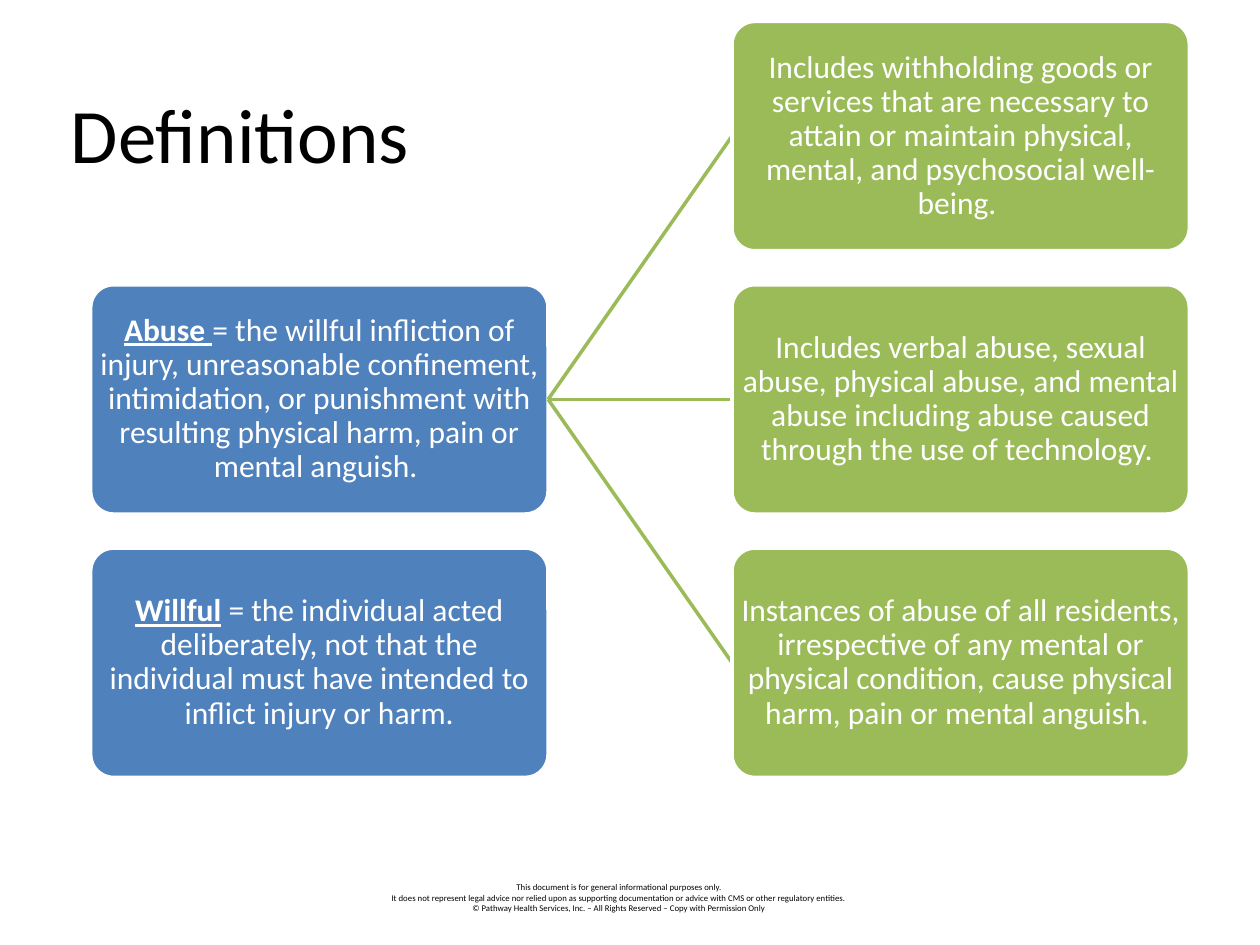
"""Build the Definitions slide on abuse and willful acts."""
from dataclasses import dataclass

from pptx import Presentation
from pptx import util as u
from pptx.dml.color import RGBColor
from pptx.enum import shapes, text
from pptx.oxml.ns import qn
from pptx.shapes.autoshape import Shape
from pptx.shapes.connector import Connector
from pptx.slide import Slide
from pptx.text.text import _Paragraph

BLACK = RGBColor(0x00, 0x00, 0x00)
WHITE = RGBColor(0xFF, 0xFF, 0xFF)
BLUE = RGBColor(0x4F, 0x81, 0xBD)
GREEN = RGBColor(0x9B, 0xBB, 0x59)
FONT = "Calibri"
BOX_WIDTH, BOX_HEIGHT = 3.63, 1.82
TERM_LEFT, DETAIL_LEFT = 0.72, 5.81
FIRST_TOP, ROW_STEP = 0.17, 2.09


@dataclass(frozen=True)
class Card:
    row: int
    body: str
    term: str = ""


ABUSE = Card(
    1,
    "= the willful infliction of injury, unreasonable confinement, intimidation, "
    "or punishment with resulting physical harm, pain or mental anguish. ",
    "Abuse ",
)
WILLFUL = Card(
    2,
    " = the individual acted deliberately, not that the individual must have "
    "intended to inflict injury or harm.",
    "Willful",
)
DETAILS = [
    Card(0, "Includes withholding goods or services that are necessary to attain or "
            "maintain physical, mental, and psychosocial well-being. "),
    Card(1, "Includes verbal abuse, sexual abuse, physical abuse, and mental abuse "
            "including abuse caused through the use of technology. "),
    Card(2, "Instances of abuse of all residents, irrespective of any mental or "
            "physical condition, cause physical harm, pain or mental anguish. "),
]
DISCLAIMER = [
    "This document is for general informational purposes only.",
    "It does not represent legal advice nor relied upon as supporting documentation "
    "or advice with CMS or other regulatory entities.",
    "© Pathway Health Services, Inc. – All Rights Reserved – Copy with Permission Only",
]


def add_span(para: _Paragraph, words: str, size: float, color: RGBColor,
             strong: bool = False) -> None:
    para.alignment = text.PP_ALIGN.CENTER
    span = para.add_run()
    span.text = words
    span.font.name = FONT
    span.font.size = u.Pt(size)
    span.font.color.rgb = color
    span.font.bold = span.font.underline = strong


def add_title(page: Slide) -> None:
    title = page.shapes.title
    title.left, title.top = u.Inches(0.44), u.Inches(0.42)
    title.width, title.height = u.Inches(2.93), u.Inches(1.27)
    title.text_frame.vertical_anchor = text.MSO_ANCHOR.MIDDLE
    add_span(title.text_frame.paragraphs[0], "Definitions", 44, BLACK)


def add_disclaimer(page: Slide) -> None:
    box = page.shapes.add_textbox(
        u.Inches(2.75), u.Inches(6.95), u.Inches(4.33), u.Inches(0.35))
    frame = box.text_frame
    frame.word_wrap = True
    for index, words in enumerate(DISCLAIMER):
        para = frame.add_paragraph() if index else frame.paragraphs[0]
        add_span(para, words, 5, BLACK)


def add_card(page: Slide, card: Card, left: float, color: RGBColor) -> Shape:
    box = page.shapes.add_shape(
        shapes.MSO_SHAPE.ROUNDED_RECTANGLE,
        u.Inches(left), u.Inches(FIRST_TOP + card.row * ROW_STEP),
        u.Inches(BOX_WIDTH), u.Inches(BOX_HEIGHT))
    box.adjustments[0] = 0.1
    box.shadow.inherit = False
    box.fill.solid()
    box.fill.fore_color.rgb = color
    box.line.color.rgb = WHITE
    box.line.width = u.Pt(2)
    frame = box.text_frame
    frame.word_wrap = True
    frame.vertical_anchor = text.MSO_ANCHOR.MIDDLE
    frame.margin_left = frame.margin_right = u.Inches(0.01)
    frame.margin_top = frame.margin_bottom = u.Inches(0.01)
    para = frame.paragraphs[0]
    para.line_spacing = 0.9
    if card.term:
        add_span(para, card.term, 18, WHITE, strong=True)
    add_span(para, card.body, 18, WHITE)
    return box


def add_branch(page: Slide, source: Shape) -> Connector:
    branch = page.shapes.add_connector(shapes.MSO_CONNECTOR.STRAIGHT, 0, 0, 0, 0)
    branch.begin_connect(source, 3)
    branch.line.color.rgb = GREEN
    branch.line.width = u.Pt(2)
    properties = branch._element.spPr
    properties.append(properties.makeelement(qn("a:effectLst"), {}))
    return branch


def main() -> None:
    deck = Presentation()
    deck.slide_width, deck.slide_height = u.Inches(10), u.Inches(7.5)
    page = deck.slides.add_slide(deck.slide_layouts.get_by_name("Title Only"))
    add_disclaimer(page)
    add_title(page)
    abuse = add_card(page, ABUSE, TERM_LEFT, BLUE)
    for detail in DETAILS:
        branch = add_branch(page, abuse)
        branch.end_connect(add_card(page, detail, DETAIL_LEFT, GREEN), 1)
    add_card(page, WILLFUL, TERM_LEFT, BLUE)
    deck.save("out.pptx")


if __name__ == "__main__":
    main()
